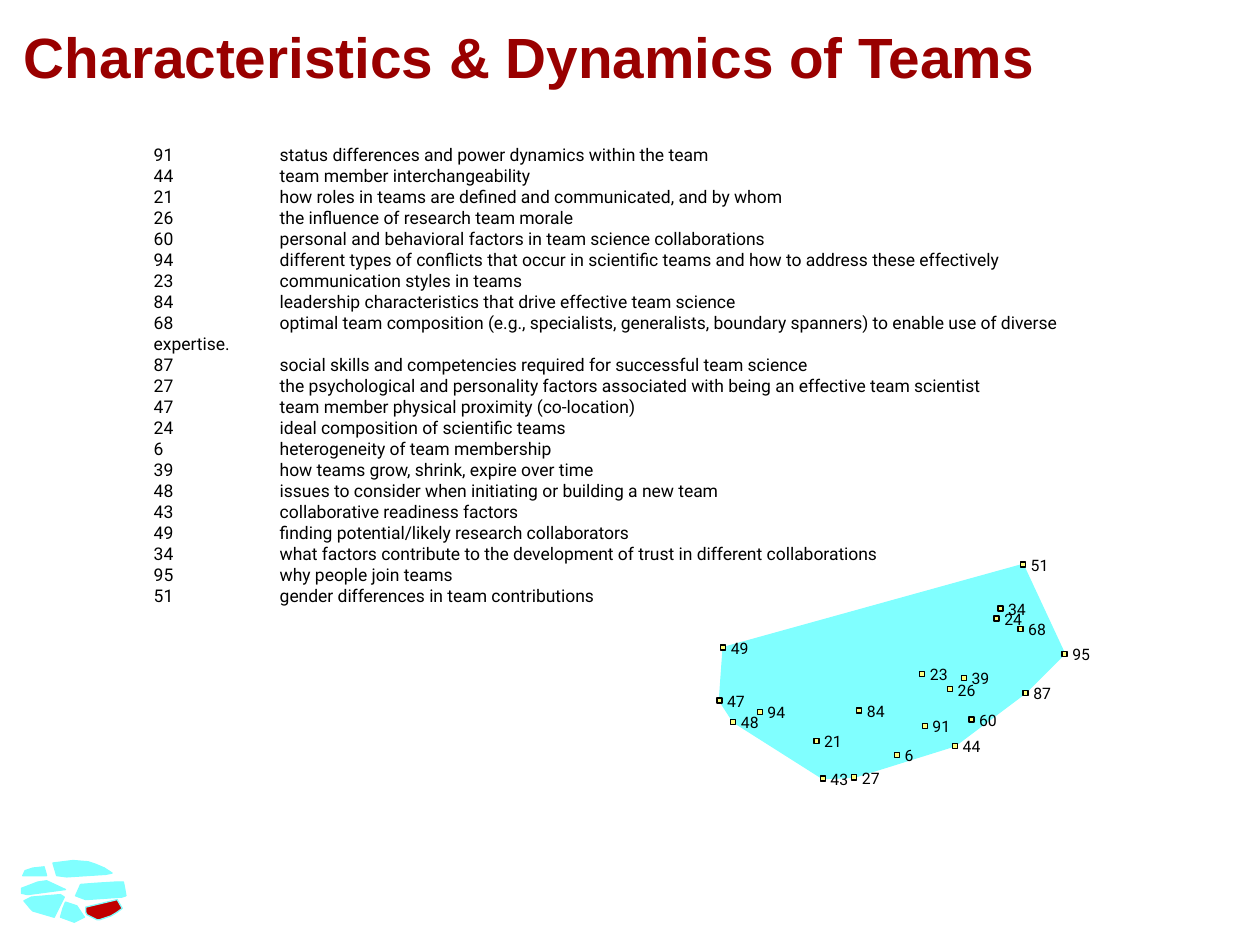
from lxml.etree import SubElement as Sub
from pptx import Presentation
from pptx.dml.color import RGBColor as Rgb
from pptx.enum.shapes import MSO_SHAPE as Shape
from pptx.enum.text import MSO_ANCHOR as Anchor, MSO_AUTO_SIZE as Auto, PP_ALIGN as Align
from pptx.oxml.ns import qn
from pptx.util import Inches, Pt

COLORS = {"title": "990000", "text": "000000", "area": "80FFFF",
          "mark": "FFFF80", "focus": "C00000"}

TOPICS = [
    (91, "status differences and power dynamics within the team"),
    (44, "team member interchangeability"),
    (21, "how roles in teams are defined and communicated, and by whom"),
    (26, "the influence of research team morale"),
    (60, "personal and behavioral factors in team science collaborations"),
    (94, "different types of conflicts that occur in scientific teams and how to address these effectively"),
    (23, "communication styles in teams"),
    (84, "leadership characteristics that drive effective team science"),
    (68, "optimal team composition (e.g., specialists, generalists, boundary spanners) to enable use of diverse expertise."),
    (87, "social skills and competencies required for successful team science"),
    (27, "the psychological and personality factors associated with being an effective team scientist"),
    (47, "team member physical proximity (co-location)"),
    (24, "ideal composition of scientific teams"),
    (6, "heterogeneity of team membership"),
    (39, "how teams grow, shrink, expire over time"),
    (48, "issues to consider when initiating or building a new team"),
    (43, "collaborative readiness factors"),
    (49, "finding potential/likely research collaborators"),
    (34, "what factors contribute to the development of trust in different collaborations"),
    (95, "why people join teams"),
    (51, "gender differences in team contributions"),
]

# Centre of each topic's marker on the cluster map, in inches
POINTS = {
    6: (7.12, 5.99), 21: (6.48, 5.88), 23: (7.32, 5.35), 24: (7.91, 4.91),
    26: (7.54, 5.47), 27: (6.78, 6.17), 34: (7.94, 4.83), 39: (7.65, 5.38),
    43: (6.53, 6.18), 44: (7.58, 5.92), 47: (5.71, 5.56), 48: (5.82, 5.73),
    49: (5.74, 5.14), 51: (8.12, 4.48), 60: (7.71, 5.71), 68: (8.1, 4.99),
    84: (6.82, 5.64), 87: (8.14, 5.5), 91: (7.34, 5.76), 94: (6.03, 5.65),
    95: (8.45, 5.19),
}
HULL = [47, 48, 43, 27, 44, 87, 95, 51, 49]

# Regions of the small overview map
REGIONS = [
    ("area", [(0.48, 7.28), (0.59, 7.32), (0.67, 7.28), (0.61, 7.19), (0.52, 7.16), (0.5, 7.21)]),
    ("focus", [(0.68, 7.24), (0.69, 7.26), (0.77, 7.3), (0.79, 7.3), (0.88, 7.27),
               (0.93, 7.24), (0.97, 7.21), (0.93, 7.14), (0.68, 7.2)]),
    ("area", [(0.18, 6.95), (0.37, 6.95), (0.35, 6.88), (0.26, 6.89), (0.2, 6.91)]),
    ("area", [(0.19, 7.15), (0.24, 7.21), (0.26, 7.23), (0.43, 7.28), (0.51, 7.12),
              (0.48, 7.1), (0.25, 7.12)]),
    ("area", [(0.17, 7.05), (0.17, 7.09), (0.22, 7.1), (0.52, 7.06), (0.37, 6.99), (0.3, 7)]),
    ("area", [(0.42, 6.85), (0.45, 6.95), (0.53, 6.96), (0.84, 6.94), (0.89, 6.93),
              (0.83, 6.89), (0.76, 6.86), (0.7, 6.84), (0.58, 6.83)]),
    ("area", [(0.6, 7.11), (0.68, 7.14), (0.97, 7.12), (1, 7.11), (0.99, 7.05),
              (0.98, 7), (0.93, 7), (0.77, 7.01), (0.64, 7.02)]),
]


def paint(shape, fill, line):
    shape.shadow.inherit = False
    shape.fill.solid()
    shape.fill.fore_color.rgb = Rgb.from_string(COLORS[fill])
    shape.line.color.rgb = Rgb.from_string(COLORS[line])
    shape.line.width = Pt(0)


def outline(shapes, points, fill):
    """Draw a closed polygon through points given in inches."""
    spots = [(Inches(x), Inches(y)) for x, y in points]
    pen = shapes.build_freeform(*spots[0])
    pen.add_line_segments(spots[1:], close=True)
    paint(pen.convert_to_shape(), fill, "area")


prs = Presentation()
prs.slide_width, prs.slide_height = Inches(10), Inches(7.5)
slide = prs.slides.add_slide(prs.slide_layouts[1])
shapes = slide.shapes

title = shapes.title
title.left, title.top = Inches(0.09), Inches(0.09)
title.width, title.height = Inches(9.83), Inches(0.7)
frame = title.text_frame
frame.text = "Characteristics & Dynamics of Teams"
frame.vertical_anchor = Anchor.MIDDLE
frame.auto_size = Auto.NONE
para = frame.paragraphs[0]
para.alignment = Align.LEFT
para.font.name, para.font.size, para.font.bold = "Arial", Pt(32.4), True
para.font.color.rgb = Rgb.from_string(COLORS["title"])

body = slide.placeholders[1]
body.left, body.top = Inches(0.75), Inches(1.09)
body.width, body.height = Inches(8), Inches(3.64)
frame = body.text_frame
frame.auto_size = Auto.NONE
frame.text = "\n".join(f"\t{num}\t{topic}" for num, topic in TOPICS)
for para in frame.paragraphs:
    para.space_before = Pt(0)
    props = para._p.get_or_add_pPr()
    props.set("marL", str(Inches(0.37)))
    props.set("indent", str(Inches(-0.37)))
    props.set("defTabSz", str(Inches(1)))
    Sub(props, qn("a:buNone"))
    tabs = Sub(props, qn("a:tabLst"))
    Sub(tabs, qn("a:tab"), pos=str(Inches(0.25)), algn="r")
    para.font.name, para.font.size = "Roboto", Pt(10)
    para.font.color.rgb = Rgb.from_string(COLORS["text"])

outline(shapes, [POINTS[num] for num in HULL], "area")
for num, (x, y) in POINTS.items():
    mark = shapes.add_shape(Shape.RECTANGLE, Inches(x - 0.02), Inches(y - 0.02),
                            Inches(0.04), Inches(0.04))
    paint(mark, "mark", "text")
    wide = 0.23 if num > 9 else 0.16
    label = shapes.add_textbox(Inches(x + 0.03), Inches(y - 0.07), Inches(wide), Inches(0.17))
    frame = label.text_frame
    frame.margin_left = frame.margin_right = frame.margin_top = frame.margin_bottom = 0
    frame.word_wrap = False
    frame.auto_size = Auto.SHAPE_TO_FIT_TEXT
    frame.text = f" {num}"
    para = frame.paragraphs[0]
    para.font.name, para.font.size = "Roboto", Pt(9)
    para.font.color.rgb = Rgb.from_string(COLORS["text"])

group = shapes.add_group_shape()
for fill, points in REGIONS:
    outline(group.shapes, points, fill)

prs.save("out.pptx")
